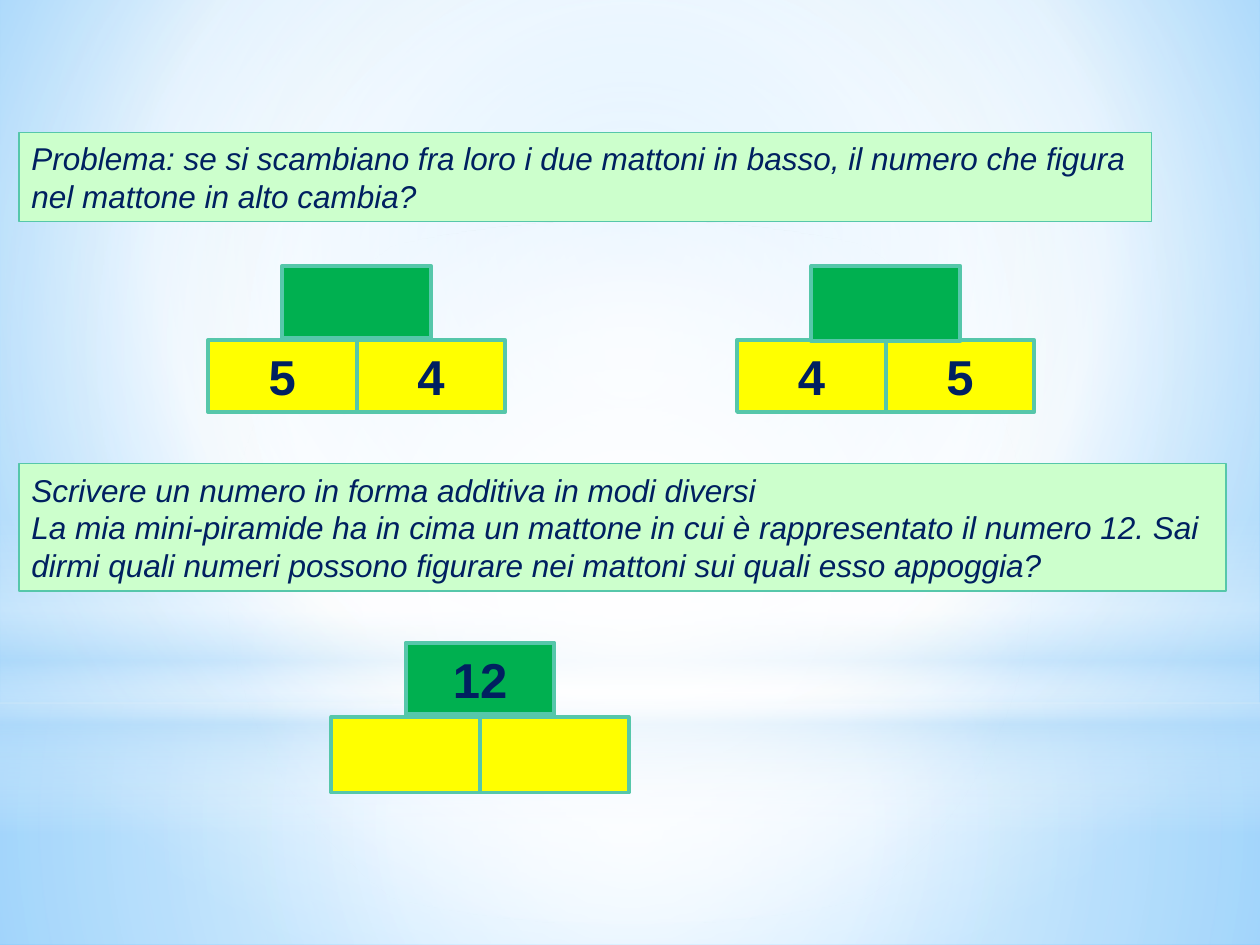
from lxml import etree
from pptx import Presentation
from pptx.dml.color import RGBColor
from pptx.enum.shapes import MSO_SHAPE
from pptx.enum.text import MSO_ANCHOR, PP_ALIGN
from pptx.oxml import parse_xml
from pptx.oxml.ns import nsdecls, qn
from pptx.util import Inches, Pt

RECT, OVAL = MSO_SHAPE.RECTANGLE, MSO_SHAPE.OVAL
LEFT, CENTER, MIDDLE = PP_ALIGN.LEFT, PP_ALIGN.CENTER, MSO_ANCHOR.MIDDLE

COLORS = {"ink": "002060", "edge": "56C7AA", "note": "CCFFCC",
          "base": "FFFF00", "top": "00B050", "white": "FFFFFF",
          "haze": "B4DCFA", "sky": "9ED5FF", "deep": "5BB9FF"}

# Gradient stops: position %, colour, opacity %
SKY = [(0, "sky", 100), (60, "white", 100), (100, "deep", 100)]
MIDPOINT = (50, 50, 50, 50)
# Backdrop: shape, top, height, stops, focus (None = top to bottom)
BACKDROP = [
    (RECT, 5.58, 1.92,
     [(0, "white", 91), (37, "white", 76), (100, "haze", 79)], MIDPOINT),
    (RECT, 0, 5.58,
     [(0, "white", 89), (48, "white", 62), (100, "haze", 79)], MIDPOINT),
    (RECT, 4.12, 2.5,
     [(0, "white", 0), (29, "white", 30), (45, "haze", 40),
      (55, "white", 26), (65, "haze", 60), (100, "white", 0)], None),
    (OVAL, 1.75, 5.58, [(0, "white", 100), (56, "white", 0)], MIDPOINT),
]

# Notes: left, top, width, height, paragraphs
NOTES = [
    (0.15, 1.05, 8.99, 0.71,
     ["Problema: se si scambiano fra loro i due mattoni in basso, il numero "
      "che figura nel mattone in alto cambia?"]),
    (0.15, 3.68, 9.58, 1.01,
     ["Scrivere un numero in forma additiva in modi diversi",
      "La mia mini-piramide ha in cima un mattone in cui è rappresentato il "
      "numero 12. Sai dirmi quali numeri possono figurare nei mattoni sui "
      "quali esso appoggia?"]),
]

# Pyramids: left, top, top brick height, base height, top text, base texts
PYRAMIDS = [
    (1.65, 2.11, 0.57, 0.57, "", ("5", "4")),
    (5.85, 2.11, 0.60, 0.57, "", ("4", "5")),
    (2.63, 5.10, 0.57, 0.60, "12", ("", "")),
]
BRICK_W, ROW_STEP = 1.18, 0.59


def rgb(name):
    return RGBColor.from_string(COLORS[name])


def set_gradient(parent, stops, focus):
    """Swap the solid fill inside parent for a gradient."""
    grad = parse_xml(f'<a:gradFill {nsdecls("a")} rotWithShape="1"><a:gsLst/></a:gradFill>')
    for pos, color, opacity in stops:
        gs = etree.SubElement(grad[0], qn("a:gs"), pos=str(pos * 1000))
        clr = etree.SubElement(gs, qn("a:srgbClr"), val=COLORS[color])
        if opacity < 100:
            etree.SubElement(clr, qn("a:alpha"), val=str(opacity * 1000))
    if focus:
        shade = etree.SubElement(grad, qn("a:path"), path="circle")
        sides = {side: str(v * 1000) for side, v in zip("ltrb", focus)}
        etree.SubElement(shade, qn("a:fillToRect"), **sides)
    else:
        etree.SubElement(grad, qn("a:lin"), ang="5400000", scaled="0")
    parent.replace(parent.find(qn("a:solidFill")), grad)


def add_box(s, kind, left, top, width, height, fill, line_pt=0):
    sp = s.shapes.add_shape(kind, Inches(left), Inches(top), Inches(width), Inches(height))
    sp.shadow.inherit = False
    sp.fill.solid()
    sp.fill.fore_color.rgb = rgb(fill)
    if line_pt:
        sp.line.color.rgb = rgb("edge")
        sp.line.width = Pt(line_pt)
    else:
        sp.line.fill.background()
    return sp


def write(sp, paragraphs, size=18, bold=False, italic=False, align=LEFT):
    tf = sp.text_frame
    tf.word_wrap = True
    tf.vertical_anchor = MIDDLE
    for i, text in enumerate(paragraphs):
        p = tf.add_paragraph() if i else tf.paragraphs[0]
        p.alignment = align
        r = p.add_run()
        r.text = text
        r.font.name = "Arial"
        r.font.size = Pt(size)
        r.font.bold = bold
        r.font.italic = italic
        r.font.color.rgb = rgb("ink")


def add_brick(s, left, top, height, fill, text):
    sp = add_box(s, RECT, left, top, BRICK_W, height, fill, line_pt=2.25)
    if text:
        write(sp, [text], size=28, bold=True, align=CENTER)


def main():
    prs = Presentation()
    prs.slide_width, prs.slide_height = Inches(10), Inches(7.5)
    s = prs.slides.add_slide(prs.slide_layouts[6])

    # Background and soft light layers
    s.background.fill.solid()
    s.background.fill.fore_color.rgb = rgb("sky")
    set_gradient(s.element.find(".//" + qn("p:bgPr")), SKY, (20, 10, 20, 60))
    for kind, top, height, stops, focus in BACKDROP:
        sp = add_box(s, kind, 0, top, 10, height, "white")
        set_gradient(sp.element.spPr, stops, focus)

    # Problem texts
    for left, top, width, height, paragraphs in NOTES:
        sp = add_box(s, RECT, left, top, width, height, "note", line_pt=0.75)
        write(sp, paragraphs, italic=True)

    # Number pyramids: two base bricks, one centred above
    for left, top, top_h, base_h, top_text, base_texts in PYRAMIDS:
        for i, text in enumerate(base_texts):
            add_brick(s, left + i * BRICK_W, top + ROW_STEP, base_h, "base", text)
        add_brick(s, left + BRICK_W / 2, top, top_h, "top", top_text)

    prs.save("out.pptx")


if __name__ == "__main__":
    main()
